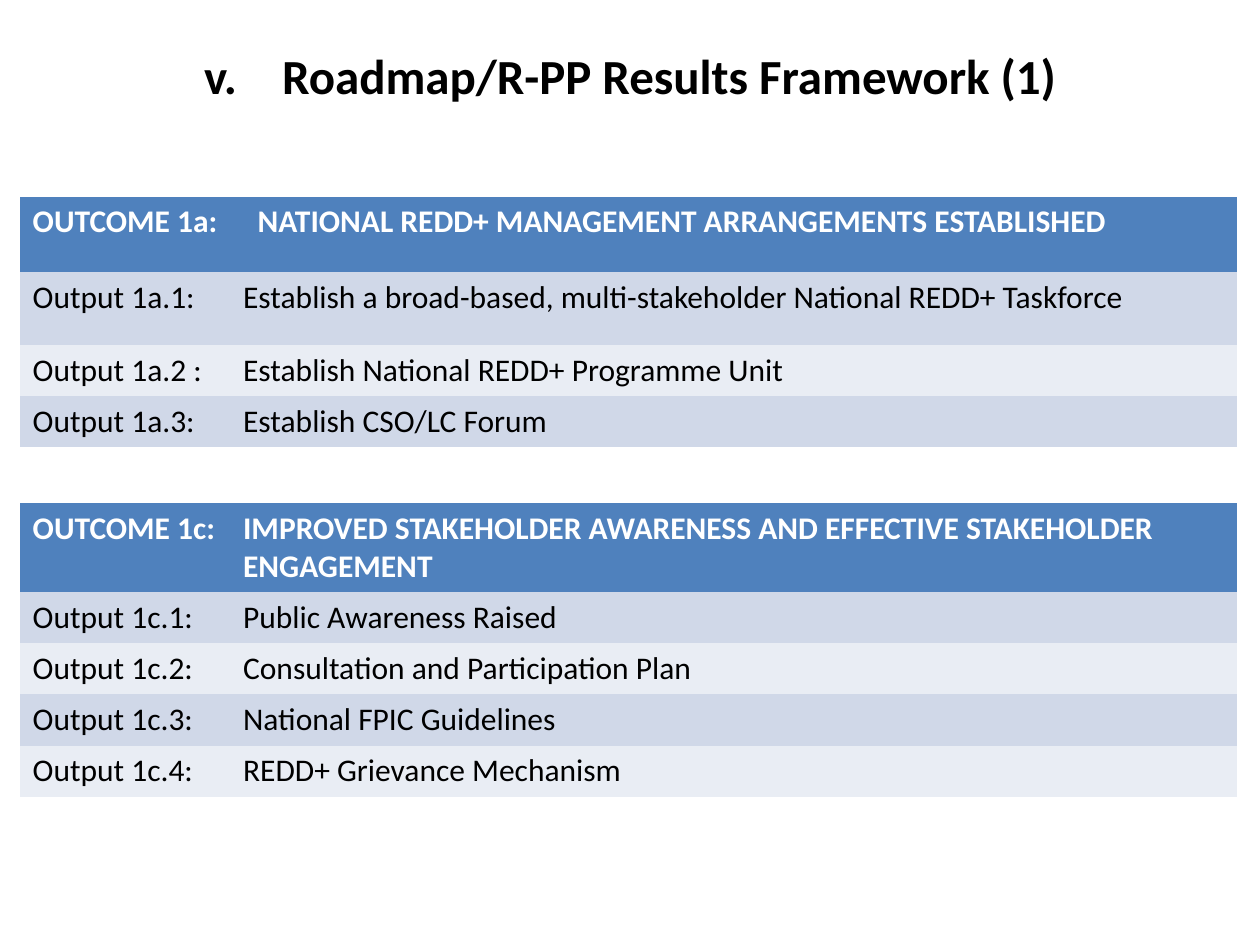
"""Build the Roadmap/R-PP results framework slide with two outcome tables."""
from dataclasses import dataclass

from lxml import etree
from pptx import Presentation
from pptx.dml.color import RGBColor
from pptx.enum.text import MSO_ANCHOR, PP_ALIGN
from pptx.oxml.ns import qn
from pptx.util import Inches, Pt

MIDDLE = MSO_ANCHOR.MIDDLE
LEFT, CENTER = PP_ALIGN.LEFT, PP_ALIGN.CENTER
TITLE_ONLY = 5
NO_STYLE = "{2D5ABB26-0587-4C30-8999-92F81FD0307C}"
GRID = Inches(0.1)
TABLE_LEFT = 1.6
COLUMNS = (16.7, 79.9)
OUTPUT_ROW = 4.05


@dataclass(frozen=True)
class Theme:
    font: str = "Calibri"
    title_size: int = 28
    table_size: int = 18
    ink: str = "000000"
    paper: str = "FFFFFF"
    header: str = "4F81BD"
    bands: tuple[str, str] = ("D0D8E8", "E9EDF4")


@dataclass(frozen=True)
class Outcome:
    code: str
    goal: str
    outputs: tuple[tuple[str, str], ...]
    top: float
    row_heights: tuple[float, ...]
    goal_indent: float = 0


THEME = Theme()
HEADING = "Roadmap/R-PP Results Framework (1)"
OUTCOMES = (
    Outcome(
        "OUTCOME 1a:", "NATIONAL REDD+ MANAGEMENT ARRANGEMENTS ESTABLISHED",
        (
            ("Output 1a.1:", "Establish a broad-based, multi-stakeholder National REDD+ Taskforce"),
            ("Output 1a.2 :", "Establish National REDD+ Programme Unit"),
            ("Output 1a.3:", "Establish CSO/LC Forum"),
        ),
        top=15.6, row_heights=(6, 5.8, OUTPUT_ROW, OUTPUT_ROW), goal_indent=1.15,
    ),
    Outcome(
        "OUTCOME 1c:", "IMPROVED STAKEHOLDER AWARENESS AND EFFECTIVE STAKEHOLDER ENGAGEMENT",
        (
            ("Output 1c.1:", "Public Awareness Raised"),
            ("Output 1c.2:", "Consultation and Participation Plan"),
            ("Output 1c.3:", "National FPIC Guidelines"),
            ("Output 1c.4:", "REDD+ Grievance Mechanism"),
        ),
        top=39.9, row_heights=(7.1,) + (OUTPUT_ROW,) * 4,
    ),
)


def units(count: float) -> int:
    return round(count * GRID)


def write(frame, text: str, *, size: int, color: str, bold: bool = False, align=LEFT):
    paragraph = frame.paragraphs[0]
    paragraph.alignment = align
    run = paragraph.add_run()
    run.text = text
    run.font.name = THEME.font
    run.font.size = Pt(size)
    run.font.bold = bold
    run.font.color.rgb = RGBColor.from_string(color)
    return paragraph


def number_roman(paragraph, start: int, indent: float) -> None:
    properties = paragraph._p.get_or_add_pPr()
    properties.set("marL", str(units(indent)))
    properties.set("indent", str(-units(indent)))
    etree.SubElement(properties, qn("a:buFont"), typeface=THEME.font)
    etree.SubElement(properties, qn("a:buAutoNum"), type="romanLcPeriod", startAt=str(start))


def add_heading(slide, width: int) -> None:
    heading = slide.shapes.title
    heading.left, heading.top, heading.width, heading.height = 0, 0, width, units(12.5)
    heading.text_frame.vertical_anchor = MIDDLE
    paragraph = write(heading.text_frame, HEADING, size=THEME.title_size,
                      color=THEME.ink, bold=True, align=CENTER)
    paragraph.line_spacing = 0.9
    paragraph.space_before = Pt(5.6)
    paragraph.space_after = Pt(12)
    number_roman(paragraph, start=5, indent=6.2)


def add_outcome(slide, outcome: Outcome) -> None:
    entries = ((outcome.code, outcome.goal), *outcome.outputs)
    holder = slide.shapes.add_table(
        len(entries), len(COLUMNS), units(TABLE_LEFT), units(outcome.top),
        units(sum(COLUMNS)), units(sum(outcome.row_heights)))
    table = holder.table
    table._tbl.tblPr.find(qn("a:tableStyleId")).text = NO_STYLE
    for column, width in zip(table.columns, COLUMNS):
        column.width = units(width)
    for index, (entry, height) in enumerate(zip(entries, outcome.row_heights)):
        is_header = index == 0
        table.rows[index].height = units(height)
        fill = THEME.header if is_header else THEME.bands[(index - 1) % 2]
        for cell, text in zip(table.rows[index].cells, entry):
            cell.fill.solid()
            cell.fill.fore_color.rgb = RGBColor.from_string(fill)
            write(cell.text_frame, text, size=THEME.table_size, bold=is_header,
                  color=THEME.paper if is_header else THEME.ink)
    goal = table.cell(0, 1)
    goal.margin_left = goal.margin_left + units(outcome.goal_indent)


def main() -> None:
    deck = Presentation()
    deck.slide_width, deck.slide_height = Inches(10), Inches(7.5)
    slide = deck.slides.add_slide(deck.slide_layouts[TITLE_ONLY])
    add_heading(slide, deck.slide_width)
    for outcome in OUTCOMES:
        add_outcome(slide, outcome)
    deck.save("out.pptx")


if __name__ == "__main__":
    main()
